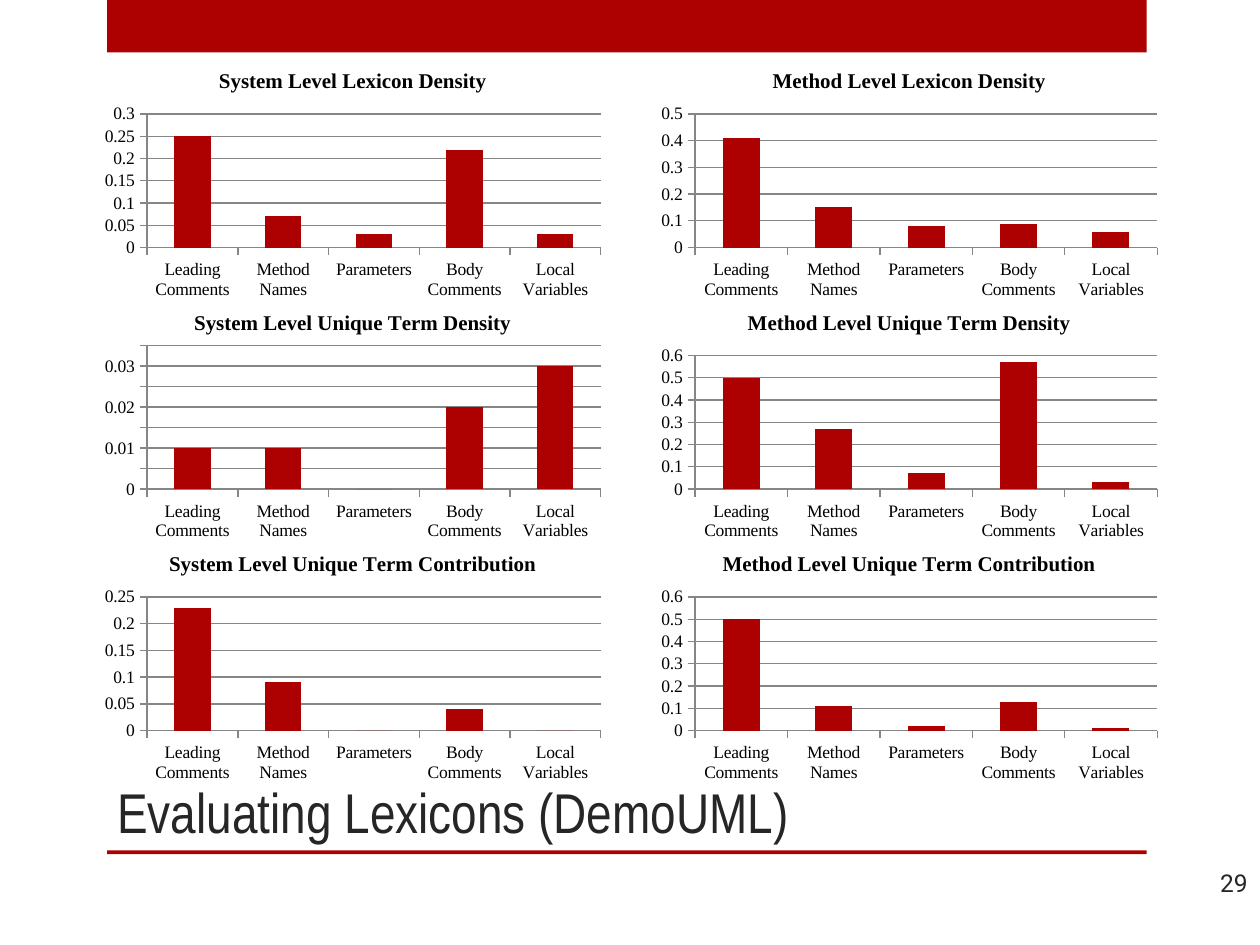
from pptx import Presentation
from pptx import util as u
from pptx.chart.data import CategoryChartData
from pptx.dml.color import RGBColor
from pptx.enum import chart as ch, shapes, text

RED = RGBColor(0xAD, 0x01, 0x01)
DARK = RGBColor(0x26, 0x26, 0x26)
GRAY = RGBColor(0x86, 0x86, 0x86)
BLACK = RGBColor(0, 0, 0)
COLS, ROWS = 12, 18

NAMES = ["Leading Comments", "Method Names", "Parameters",
         "Body Comments", "Local Variables"]
# One row of the grid per measure: system level, then method level
DATA = [
    ("Lexicon Density",
     [0.25, 0.07, 0.03, 0.22, 0.03], [0.41, 0.15, 0.08, 0.09, 0.06]),
    ("Unique Term Density",
     [0.01, 0.01, 0, 0.02, 0.03], [0.5, 0.27, 0.07, 0.57, 0.03]),
    ("Unique Term Contribution",
     [0.23, 0.09, 0, 0.04, 0], [0.5, 0.11, 0.02, 0.13, 0.01]),
]


class Page:
    """Holds the style and the slide; places are grid columns and rows."""

    def __init__(self, deck):
        self.cell = deck.slide_width / COLS, deck.slide_height / ROWS
        self.slide = deck.slides.add_slide(deck.slide_layouts[6])

    def box(self, x, y, w, h):
        cw, rh = self.cell
        return [int(n) for n in (x * cw, y * rh, w * cw, h * rh)]

    def font(self, font, face, size, color, bold=False):
        font.name, font.size, font.bold = face, u.Pt(size), bold
        font.color.rgb = color

    def bar(self, *place):
        bar = self.slide.shapes.add_shape(
            shapes.MSO_SHAPE.RECTANGLE, *self.box(*place))
        bar.shadow.inherit = False
        bar.fill.solid()
        bar.fill.fore_color.rgb = RED
        bar.line.fill.background()

    def label(self, words, place, face, size, anchor, align):
        frame = self.slide.shapes.add_textbox(*self.box(*place)).text_frame
        frame.word_wrap = True
        frame.vertical_anchor = anchor
        para = frame.paragraphs[0]
        para.alignment = align
        run = para.add_run()
        run.text = words
        self.font(run.font, face, size, DARK)

    def axis(self, axis):
        axis.major_tick_mark = ch.XL_TICK_MARK.OUTSIDE
        axis.minor_tick_mark = ch.XL_TICK_MARK.NONE
        self.font(axis.tick_labels.font, "Times New Roman", 10, BLACK)
        self.line(axis.format.line)

    def line(self, line):
        line.color.rgb = GRAY
        line.width = u.Pt(0.75)

    def chart(self, title, vals, place):
        data = CategoryChartData()
        data.categories = NAMES
        data.add_series("Series 1", vals)
        chart = self.slide.shapes.add_chart(
            ch.XL_CHART_TYPE.COLUMN_CLUSTERED, *self.box(*place), data).chart
        self.font(chart.font, "Times New Roman", 18, BLACK)
        chart.has_legend = False

        # Title
        chart.has_title = True
        run = chart.chart_title.text_frame.paragraphs[0].add_run()
        run.text = title
        self.font(run.font, "Times New Roman", 12, BLACK, True)
        chart.chart_title.include_in_layout = False

        # Axes and grid lines
        self.axis(chart.category_axis)
        self.axis(chart.value_axis)
        chart.value_axis.has_major_gridlines = True
        self.line(chart.value_axis.major_gridlines.format.line)

        # Columns
        plot = chart.plots[0]
        plot.gap_width = 150
        plot.vary_by_categories = False
        fill = plot.series[0].format.fill
        fill.solid()
        fill.fore_color.rgb = RED


def main():
    deck = Presentation()
    deck.slide_width, deck.slide_height = u.Inches(10), u.Inches(7.5)
    page = Page(deck)

    # Top band and rule under the title
    page.bar(1.02, 0, 9.9, 1)
    page.bar(1.02, 16.2, 9.9, 0.07)

    # Slide title and number
    page.label("Evaluating Lexicons (DemoUML)", (1, 12, 8.9, 4.2),
               "Arial Narrow", 32, text.MSO_ANCHOR.BOTTOM, text.PP_ALIGN.LEFT)
    page.label("29", (11.2, 16.27, 0.8, 1.08),
               "Roboto", 14, text.MSO_ANCHOR.MIDDLE, text.PP_ALIGN.RIGHT)

    # Three measures down, two levels across
    for row, (name, *sets) in enumerate(DATA):
        for col, (level, vals) in enumerate(zip(("System", "Method"), sets)):
            page.chart(f"{level} Level {name}", vals,
                       (0.9 + 5.3 * col, 1 + 4.6 * row, 4.92, 4.8))

    deck.save("out.pptx")


if __name__ == "__main__":
    main()
